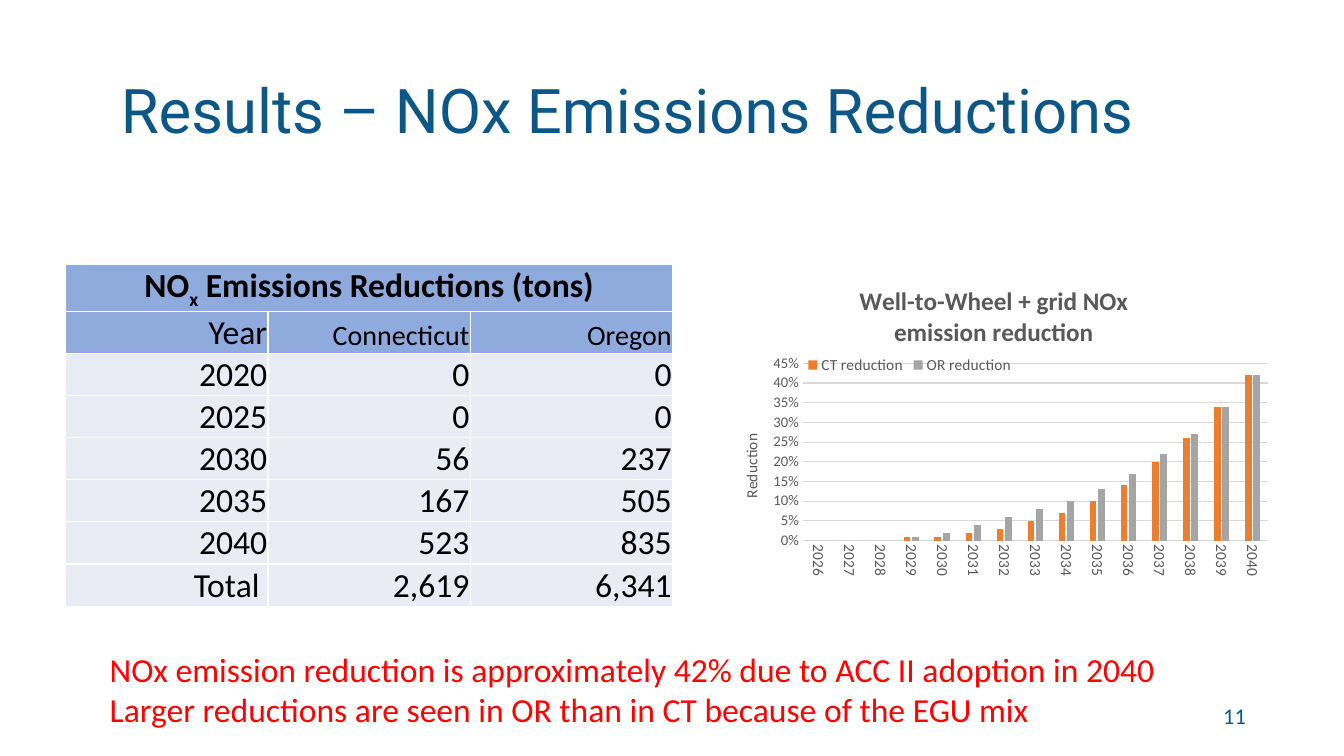
from lxml import etree
from pptx import Presentation
from pptx.chart.data import CategoryChartData
from pptx.dml.color import RGBColor
from pptx.enum.chart import XL_CHART_TYPE, XL_LEGEND_POSITION, XL_TICK_MARK
from pptx.enum.text import MSO_ANCHOR, PP_ALIGN
from pptx.oxml import parse_xml
from pptx.oxml.ns import nsdecls, qn
from pptx.util import Pt

LEFT, CENTER, RIGHT = PP_ALIGN.LEFT, PP_ALIGN.CENTER, PP_ALIGN.RIGHT
TOP, MIDDLE, BOTTOM = MSO_ANCHOR.TOP, MSO_ANCHOR.MIDDLE, MSO_ANCHOR.BOTTOM
COLUMNS, NO_TICK = XL_CHART_TYPE.COLUMN_CLUSTERED, XL_TICK_MARK.NONE

COLORS = {
    "blue": "0C5788", "red": "FF0000", "black": "000000", "white": "FFFFFF",
    "header": "8FAADC", "body": "E9EBF5",
    "label": "595959", "grid": "D9D9D9", "ct": "ED7D31", "or": "A5A5A5",
}

# Content
TITLE = "Results – NOx Emissions Reductions"
PAGE = "11"
FINDINGS = [
    "NOx emission reduction is approximately 42% due to ACC II adoption in 2040",
    "Larger reductions are seen in OR than in CT because of the EGU mix",
]
TABLE_TITLE = ["NO", "x", " Emissions Reductions (tons)"]
TABLE_ROWS = [
    ("Year", "Connecticut", "Oregon"),
    ("2020", "0", "0"),
    ("2025", "0", "0"),
    ("2030", "56", "237"),
    ("2035", "167", "505"),
    ("2040", "523", "835"),
    ("Total ", "2,619", "6,341"),
]
CHART_TITLE = ["Well-to-Wheel + grid NOx", "emission reduction"]
YEARS = [str(year) for year in range(2026, 2041)]
SERIES = [
    ("CT reduction", "ct", [0, 0, 0, 0.01, 0.01, 0.02, 0.03, 0.05, 0.07, 0.1,
                            0.14, 0.2, 0.26, 0.34, 0.42]),
    ("OR reduction", "or", [0, 0, 0, 0.01, 0.02, 0.04, 0.06, 0.08, 0.1, 0.13,
                            0.17, 0.22, 0.27, 0.34, 0.42]),
]


def color(name):
    return RGBColor.from_string(COLORS[name])


def style(font, size, name, bold=False, face="Calibri"):
    font.size, font.name, font.bold = Pt(size), face, bold
    font.color.rgb = color(name)


def add_text(s, box, lines, size, name, face="Calibri", align=LEFT,
             anchor=TOP, spacing=1.0):
    tf = s.shapes.add_textbox(*map(Pt, box)).text_frame
    tf.word_wrap, tf.vertical_anchor = True, anchor
    for i, line in enumerate(lines):
        p = tf.add_paragraph() if i else tf.paragraphs[0]
        p.text, p.alignment, p.line_spacing = line, align, spacing
        style(p.font, size, name, face=face)


def format_cell(cell, fill):
    cell.margin_left = cell.margin_right = cell.margin_top = Pt(0.72)
    cell.margin_bottom = 0
    cell.vertical_anchor = BOTTOM
    cell.fill.solid()
    cell.fill.fore_color.rgb = color(fill)
    tcPr = cell._tc.get_or_add_tcPr()
    for i, side in enumerate("LRTB"):
        tcPr.insert(i, parse_xml(
            f'<a:ln{side} {nsdecls("a")} w="12700"><a:solidFill>'
            f'<a:srgbClr val="{COLORS["white"]}"/></a:solidFill></a:ln{side}>'))


def add_table(s):
    heights = [32.5] + [30.1] * len(TABLE_ROWS)
    frame = s.shapes.add_table(len(heights), 3, Pt(47), Pt(188.9),
                               Pt(433.5), Pt(sum(heights)))
    table = frame.table
    for column in table.columns:
        column.width = Pt(144.5)
    for row, height in zip(table.rows, heights):
        row.height = Pt(height)

    # Heading across all columns, with a subscript
    for cell in table.rows[0].cells:
        format_cell(cell, "header")
    heading = table.cell(0, 0)
    heading.merge(table.cell(0, 2))
    p = heading.text_frame.paragraphs[0]
    p.alignment = CENTER
    style(p.font, 24, "black", bold=True)
    for text in TABLE_TITLE:
        r = p.add_run()
        r.text = text
        style(r.font, 24, "black", bold=True)
        if text == "x":
            r._r.get_or_add_rPr().set("baseline", "-25000")

    # Column names and figures
    for i, values in enumerate(TABLE_ROWS, 1):
        for j, value in enumerate(values):
            cell = table.cell(i, j)
            format_cell(cell, "header" if i == 1 else "body")
            p = cell.text_frame.paragraphs[0]
            p.text, p.alignment = value, RIGHT
            style(p.font, 20 if i == 1 and j else 24, "black", bold=False)


def place(element, x, y, w=None, h=None, inner=False):
    """Fix a chart part at fractions of the chart frame."""
    for old in element.findall(qn("c:layout")):
        element.remove(old)
    parts = [("xMode", "edge"), ("yMode", "edge"), ("x", x), ("y", y)]
    if inner:
        parts.insert(0, ("layoutTarget", "inner"))
    if w:
        parts += [("w", w), ("h", h)]
    layout = etree.Element(qn("c:layout"))
    manual = etree.SubElement(layout, qn("c:manualLayout"))
    for tag, value in parts:
        etree.SubElement(manual, qn("c:" + tag)).set("val", str(value))
    before = [e for e in element if e.tag in (qn("c:tx"), qn("c:legendPos"))]
    element.insert(len(before), layout)


def set_title(title, lines, size, bold):
    tf = title.text_frame
    for i, line in enumerate(lines):
        p = tf.add_paragraph() if i else tf.paragraphs[0]
        r = p.add_run()
        r.text = line
        style(r.font, size, "label", bold)


def add_chart(s):
    data = CategoryChartData(number_format="0%")
    data.categories = YEARS
    for name, _, values in SERIES:
        data.add_series(name, values)
    chart = s.shapes.add_chart(COLUMNS, Pt(511.2), Pt(188.6), Pt(401.8),
                               Pt(253.4), data).chart
    style(chart.font, 10, "label")
    set_title(chart.chart_title, CHART_TITLE, 18, True)
    place(chart.chart_title._element, 0.25, 0.05)

    # Bars
    plot = chart.plots[0]
    plot.gap_width, plot.overlap, plot.vary_by_categories = 219, -27, False
    for series, (_, fill, _) in zip(plot.series, SERIES):
        series.format.fill.solid()
        series.format.fill.fore_color.rgb = color(fill)
    place(chart._chartSpace.chart.plotArea, 0.155, 0.28, 0.827, 0.5, True)

    # Axes
    years, share = chart.category_axis, chart.value_axis
    for axis, size in ((years, 11), (share, 10.5)):
        axis.major_tick_mark = axis.minor_tick_mark = NO_TICK
        style(axis.tick_labels.font, size, "label")
    years._element.txPr.bodyPr.set("rot", "5400000")
    share.minimum_scale, share.maximum_scale, share.major_unit = 0, 0.45, 0.05
    share.tick_labels.number_format = "0%"
    share.tick_labels.number_format_is_linked = False
    share.format.line.fill.background()
    for line in (years.format.line, share.major_gridlines.format.line):
        line.width = Pt(0.75)
        line.color.rgb = color("grid")
    set_title(share.axis_title, ["Reduction"], 11, False)
    place(share.axis_title._element, 0.04, 0.47)

    # Legend over the top of the plot
    chart.has_legend = True
    legend = chart.legend
    legend.position = XL_LEGEND_POSITION.BOTTOM
    legend.include_in_layout = False
    style(legend.font, 11, "label")
    place(legend._element, 0.155, 0.25, 0.38, 0.07)


def main():
    prs = Presentation()
    prs.slide_width, prs.slide_height = Pt(960), Pt(540)
    s = prs.slides.add_slide(prs.slide_layouts[6])
    add_text(s, (79.2, 28.8, 802.8, 104.4), [TITLE], 44, "blue", "Roboto",
             anchor=MIDDLE, spacing=0.9)
    add_text(s, (681, 497, 216, 28.8), [PAGE], 16, "blue", align=RIGHT,
             anchor=MIDDLE)
    add_table(s)
    add_text(s, (71.3, 460, 773.3, 65.5), FINDINGS, 24, "red")
    add_chart(s)
    prs.save("out.pptx")


if __name__ == "__main__":
    main()
